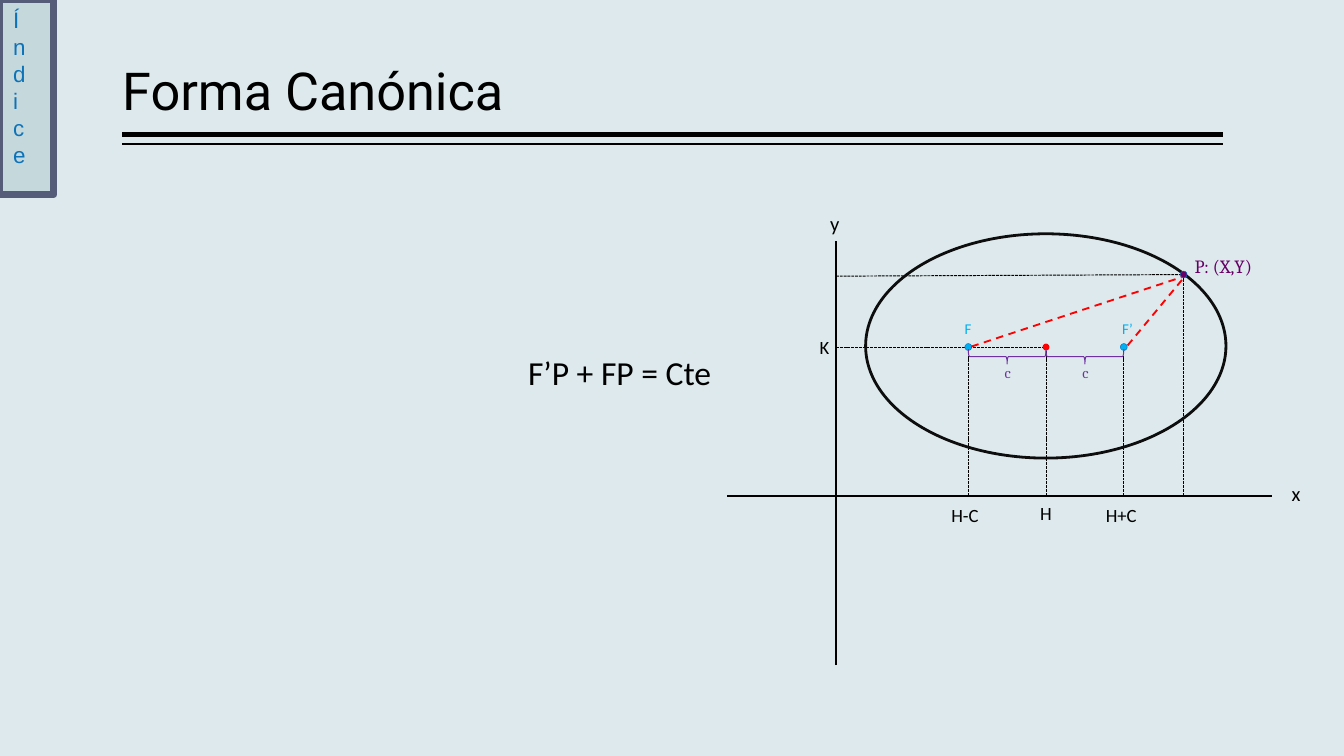
"""Build the slide on the canonical form of the ellipse."""
from dataclasses import dataclass

from lxml import etree
from pptx import Presentation
from pptx import util as u
from pptx.dml.color import RGBColor
from pptx.enum import dml, shapes, text
from pptx.oxml import ns


@dataclass(frozen=True)
class Theme:
    background: str = "DDE9EC"
    ink: str = "000000"
    curve: str = "0D0D0D"
    focus: str = "00B0F0"
    edge: str = "0070C0"
    center: str = "FF0000"
    distance: str = "7030A0"
    point: str = "660066"
    tab_fill: str = "528693"
    tab_line: str = "545C79"
    heading: int = 28
    formula: int = 18
    index: int = 12
    axis: int = 11
    label: int = 10
    small: int = 8


theme = Theme()
rgb = RGBColor.from_string
deck = Presentation()
deck.slide_width, deck.slide_height = u.Cm(25.4), u.Cm(14.29)
slide = deck.slides.add_slide(deck.slide_layouts[5])
slide.background.fill.solid()
slide.background.fill.fore_color.rgb = rgb(theme.background)


def write(wording, box, holder=None, size=theme.label, font="Calibri", color=theme.ink,
          wrap=False, spacing=1.0, fit=text.MSO_AUTO_SIZE.SHAPE_TO_FIT_TEXT):
    place = [u.Cm(length) for length in box]
    holder = holder or slide.shapes.add_textbox(*place)
    holder.left, holder.top, holder.width, holder.height = place
    frame = holder.text_frame
    frame.text = wording
    frame.word_wrap, frame.auto_size = wrap, fit
    paragraph = frame.paragraphs[0]
    paragraph.alignment, paragraph.line_spacing = text.PP_ALIGN.LEFT, spacing
    run_font = paragraph.runs[0].font
    run_font.name, run_font.size, run_font.color.rgb = font, u.Pt(size), rgb(color)
    return holder


def draw_line(x1, y1, x2, y2, width=1, color=theme.ink, dash=None):
    ends = [u.Cm(length) for length in (x1, y1, x2, y2)]
    stroke = slide.shapes.add_connector(shapes.MSO_CONNECTOR.STRAIGHT, *ends)
    stroke.line.width, stroke.line.color.rgb = u.Pt(width), rgb(color)
    stroke.line.dash_style = dash
    etree.SubElement(stroke.element.spPr, ns.qn("a:effectLst"))


heading = write("Forma Canónica", (2.31, 0.15, 20.8, 2.29), slide.shapes.title,
                size=theme.heading, font="Roboto", wrap=True, spacing=0.9,
                fit=text.MSO_AUTO_SIZE.NONE).text_frame
heading.vertical_anchor = text.MSO_ANCHOR.BOTTOM
heading.margin_left = heading.margin_right = 0
heading.margin_top = heading.margin_bottom = u.Cm(0.13)
for rule_y, weight in ((2.54, 3), (2.72, 1)):
    draw_line(23.11, rule_y, 2.31, rule_y, weight)

write("F’P + FP = Cte", (9.73, 6.53, 4.7, 1.02), size=theme.formula, wrap=True)

axis_x, axis_y = 15.8, 9.37
center_x, center_y = 19.77, 6.56
left_focus, right_focus = 18.3, 21.24
point_x, point_y = 22.37, 5.19

draw_line(axis_x, 12.57, axis_x, 4.55)
draw_line(13.74, axis_y, 24.03, axis_y)
for name, x, y, width in (("x", 24.16, 9.02, 0.76), ("y", 15.44, 3.91, 0.66)):
    write(name, (x, y, width, 0.69), size=theme.axis, wrap=True, spacing=0.9)

for x, top in ((left_focus, 6.6), (center_x, 6.63), (right_focus, 6.63), (point_x, 5.23)):
    draw_line(x, axis_y, x, top, 0.5, dash=dml.MSO_LINE.SQUARE_DOT)
for x, y, start_y in ((center_x, center_y, center_y), (point_x, point_y, 5.22)):
    draw_line(axis_x, start_y, x, y, 0.5, dash=dml.MSO_LINE.SQUARE_DOT)

curve = slide.shapes.add_shape(shapes.MSO_SHAPE.OVAL, u.Cm(16.36), u.Cm(4.42),
                               u.Cm(6.81), u.Cm(4.24))
curve.shadow.inherit = False
curve.fill.background()
curve.line.color.rgb, curve.line.width = rgb(theme.curve), u.Pt(1.5)

dot_size = 0.13
for x, y, color, edge in ((center_x, center_y, theme.center, None),
                          (left_focus, center_y, theme.focus, theme.edge),
                          (right_focus, center_y, theme.focus, theme.edge),
                          (point_x, point_y, theme.point, theme.edge)):
    dot = slide.shapes.add_shape(shapes.MSO_SHAPE.OVAL, u.Cm(x - dot_size / 2),
                                 u.Cm(y - dot_size / 2), u.Cm(dot_size), u.Cm(dot_size))
    dot.shadow.inherit = False
    dot.fill.solid()
    dot.fill.fore_color.rgb = rgb(color)
    if edge:
        dot.line.color.rgb, dot.line.width = rgb(edge), u.Pt(0.25)
    else:
        dot.line.fill.background()

brace_width, brace_y = 0.28, 6.74
for start, end in ((left_focus, center_x), (center_x, right_focus)):
    middle, span = (start + end) / 2, end - start
    brace = slide.shapes.add_shape(shapes.MSO_SHAPE.LEFT_BRACE, u.Cm(middle - brace_width / 2),
                                   u.Cm(brace_y - span / 2), u.Cm(brace_width), u.Cm(span))
    brace.rotation = 270
    brace.shadow.inherit = False
    brace.fill.background()
    brace.line.color.rgb, brace.line.width = rgb(theme.distance), u.Pt(0.5)
    write("c", (middle - 0.3, 6.75, 0.58, 0.61), size=theme.small, font="Cambria",
          color=theme.distance, wrap=True)

for name, x, y, width in (("H-C", 17.73, 9.4, 1.14), ("H", 19.41, 9.37, 0.76),
                          ("H+C", 20.65, 9.4, 1.24), ("K", 15.24, 6.22, 0.74)):
    write(name, (x, y, width, 0.69))
for name, x, width in (("F", 17.98, 0.69), ("F’", 20.96, 0.74)):
    write(name, (x, 5.92, width, 0.61), size=theme.small, color=theme.focus)
write("P: (X,Y)", (22.33, 4.7, 1.65, 0.69), font="Cambria", color=theme.point)

for x, y, end_x in ((18.36, 6.55, 22.33), (21.31, 6.53, 22.38)):
    draw_line(x, y, end_x, 5.24, color=theme.center, dash=dml.MSO_LINE.DASH)

index = write("Índice", (0, 0, 1.09, 3.99), size=theme.index, font="Arial",
              color=theme.edge, wrap=True)
index.element.txBody.bodyPr.set("vert", "wordArtVert")
tab = slide.shapes.add_shape(shapes.MSO_SHAPE.RECTANGLE, 0, 0, u.Cm(1.02), u.Cm(3.68))
tab.shadow.inherit = False
tab.fill.solid()
tab.fill.fore_color.rgb = rgb(theme.tab_fill)
tint = tab.element.spPr.find(ns.qn("a:solidFill")).find(ns.qn("a:srgbClr"))
etree.SubElement(tint, ns.qn("a:alpha"), val="17000")
tab.line.color.rgb, tab.line.width = rgb(theme.tab_line), u.Pt(3.78)

deck.save("out.pptx")
